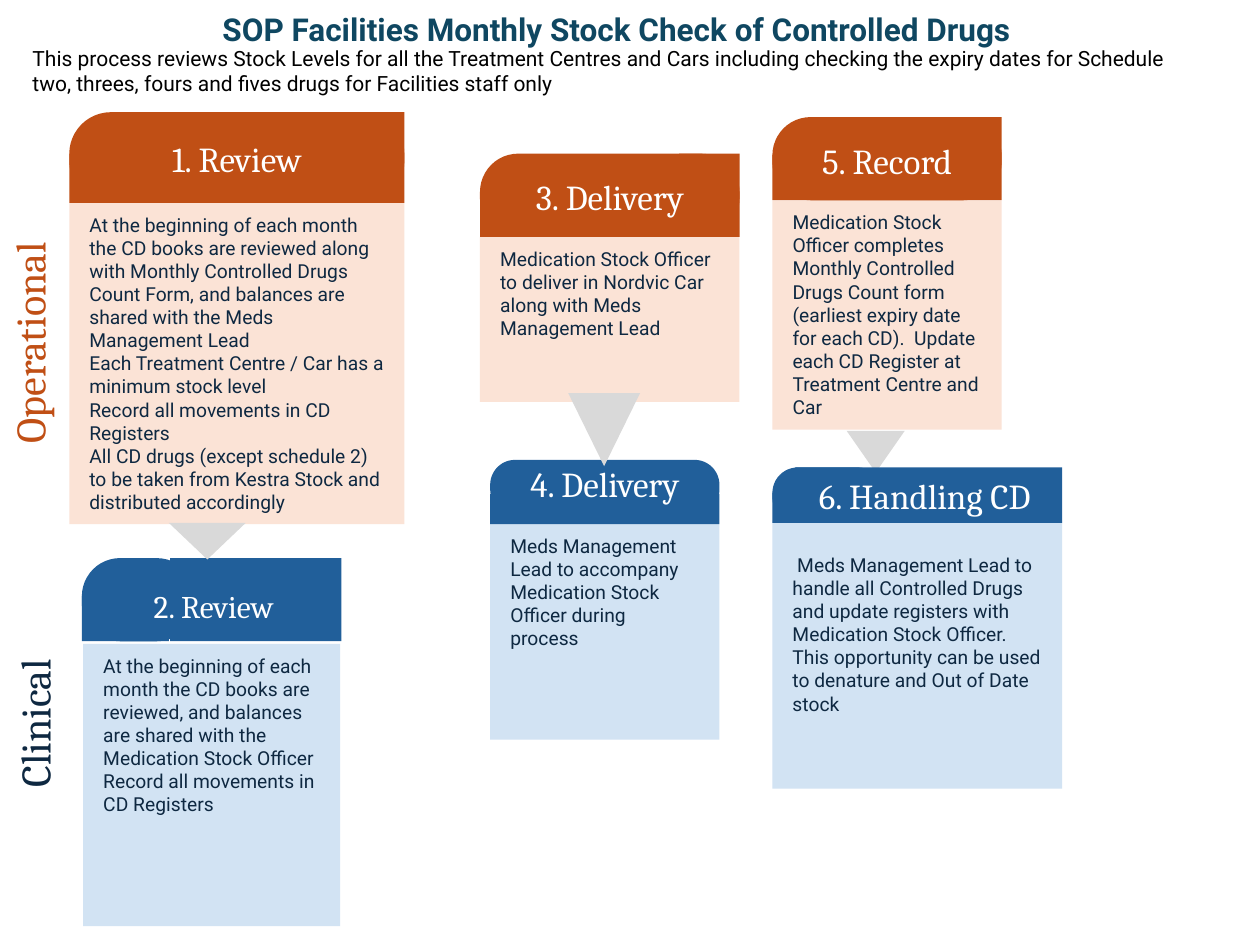
import pptx
import pptx.util
import pptx.dml.color
import pptx.enum.shapes
import pptx.enum.text

PX = 9144  # 100 px to the inch
ORANGE, PEACH = "C04F15", "FBE3D6"
BLUE, PALE_BLUE = "215F9A", "D2E3F3"
NAVY, TEAL, GREY, WHITE, BLACK = "0E2841", "0F4761", "D9D9D9", "FFFFFF", "000000"
SHAPES = pptx.enum.shapes.MSO_SHAPE
ANCHOR = pptx.enum.text.MSO_ANCHOR
LEFT, CENTER = pptx.enum.text.PP_ALIGN.LEFT, pptx.enum.text.PP_ALIGN.CENTER

presentation = pptx.Presentation()
presentation.slide_width, presentation.slide_height = 1000 * PX, 750 * PX
slide = presentation.slides.add_slide(presentation.slide_layouts[5])


def add_block(kind, box, color):
    shape = slide.shapes.add_shape(kind, *[length * PX for length in box])
    shape.shadow.inherit = False
    shape.fill.solid()
    shape.fill.fore_color.rgb = pptx.dml.color.RGBColor.from_string(color)
    shape.line.fill.background()
    return shape


def write(shape, text, size, font, color, align=LEFT, anchor=ANCHOR.TOP, bold=False):
    frame = shape.text_frame
    frame.text = text
    frame.word_wrap = True
    frame.auto_size = pptx.enum.text.MSO_AUTO_SIZE.NONE
    frame.vertical_anchor = anchor
    for paragraph in frame.paragraphs:
        paragraph.alignment = align
        for run in paragraph.runs:
            run.font.size = pptx.util.Pt(size)
            run.font.name = font
            run.font.bold = bold
            run.font.color.rgb = pptx.dml.color.RGBColor.from_string(color)


# Title and introduction
title = slide.shapes.title
title.left, title.top, title.width, title.height = [n * PX for n in (50, 1, 885, 41)]
write(title, "SOP Facilities Monthly Stock Check of Controlled Drugs ", 18, "Roboto", TEAL,
      CENTER, bold=True)
title.text_frame.paragraphs[0].line_spacing = 1.07

intro = slide.shapes.add_textbox(*[n * PX for n in (16, 31, 953, 50)])
write(intro, "This process reviews Stock Levels for all the Treatment Centres and Cars including "
      "checking the expiry dates for Schedule two, threes, fours and fives drugs for "
      "Facilities staff only", 12, "Roboto", BLACK)

# Row names, turned to read upwards
for name, box, color in [("Operational", (-106, 247, 258, 50), ORANGE),
                         ("Clinical", (-115, 549, 284, 50), NAVY)]:
    row_name = slide.shapes.add_textbox(*[n * PX for n in box])
    row_name.rotation = 270
    write(row_name, name, 24, "Cambria", color, CENTER)

# Step cards: heading, size, colours, body box, rounded header, square header parts,
# heading box, top inset of the body, body text
cards = [
    ("1. Review", 20, ORANGE, PEACH, (55, 161, 266, 255), (55, 89, 266, 72),
     [(55, 122, 190, 39), (259, 89, 62, 72)], (55, 102, 266, 48), 8,
     "At the beginning of each month the CD books are reviewed along with Monthly Controlled "
     "Drugs Count Form, and balances are shared with the Meds Management Lead\n"
     "Each Treatment Centre / Car has a minimum stock level\n"
     "Record all movements in CD Registers\n"
     "All CD drugs (except schedule 2) to be taken from Kestra Stock and distributed accordingly"),
    ("2. Review", 18, BLUE, PALE_BLUE, (66, 511, 204, 224), (65, 443, 90, 66),
     [(65, 473, 69, 36), (135, 443, 136, 66)], (75, 461, 189, 40), 8,
     "At the beginning of each month the CD books are reviewed, and balances are shared with "
     "the Medication Stock Officer\nRecord all movements in CD Registers"),
    ("3. Delivery", 20, ORANGE, PEACH, (381, 188, 206, 131), (381, 122, 206, 66),
     [(381, 152, 158, 36), (539, 122, 48, 66)], (381, 134, 206, 44), 8,
     "Medication Stock Officer to deliver in Nordvic Car along with Meds Management Lead"),
    ("4. Delivery", 20, BLUE, PALE_BLUE, (389, 416, 182, 171), (389, 365, 182, 43),
     [(389, 392, 182, 24)], (389, 362, 182, 44), 8,
     "Meds Management Lead to accompany Medication Stock Officer during process"),
    ("5. Record", 20, ORANGE, PEACH, (613, 159, 182, 182), (613, 93, 182, 66),
     [(613, 123, 140, 36), (753, 93, 42, 66)], (613, 105, 182, 44), 8,
     "Medication Stock Officer completes Monthly Controlled Drugs Count form (earliest expiry "
     "date for each CD).  Update each CD Register at Treatment Centre and Car"),
    ("6. Handling CD ", 20, BLUE, PALE_BLUE, (613, 413, 230, 213), (613, 371, 88, 44),
     [(613, 391, 67, 24), (631, 371, 212, 44)], (631, 371, 212, 44), 26,
     " Meds Management Lead to handle all Controlled Drugs and update registers with Medication "
     "Stock Officer.  This opportunity can be used to denature and Out of Date stock"),
]
for (heading, size, dark, pale, body_box, round_box, square_boxes, heading_box,
     top_inset, text) in cards:
    body = add_block(SHAPES.RECTANGLE, body_box, pale)
    write(body, text, 11, "Roboto", NAVY)
    frame = body.text_frame
    frame.margin_left = frame.margin_right = 16 * PX
    frame.margin_top, frame.margin_bottom = top_inset * PX, 8 * PX

    add_block(SHAPES.ROUNDED_RECTANGLE, round_box, dark).adjustments[0] = 0.46
    for square_box in square_boxes:
        square = add_block(SHAPES.RECTANGLE, square_box, dark)
    if heading_box in square_boxes:
        label = square
    else:
        label = slide.shapes.add_textbox(*[n * PX for n in heading_box])
    write(label, heading, size, "Cambria", WHITE, CENTER, ANCHOR.MIDDLE)

# Arrows pointing down between the steps
for box in [(134, 415, 61, 29), (451, 312, 57, 58), (672, 342, 46, 33)]:
    add_block(SHAPES.ISOSCELES_TRIANGLE, box, GREY).rotation = 180
# The last arrow ends behind the header of step 6
arrow = slide.shapes[-1]
header = next(shape for shape in slide.shapes if shape.text_frame.text == "6. Handling CD ")
first_part = list(slide.shapes).index(header) - 3
slide.shapes[first_part].element.addprevious(arrow.element)

presentation.save("out.pptx")
